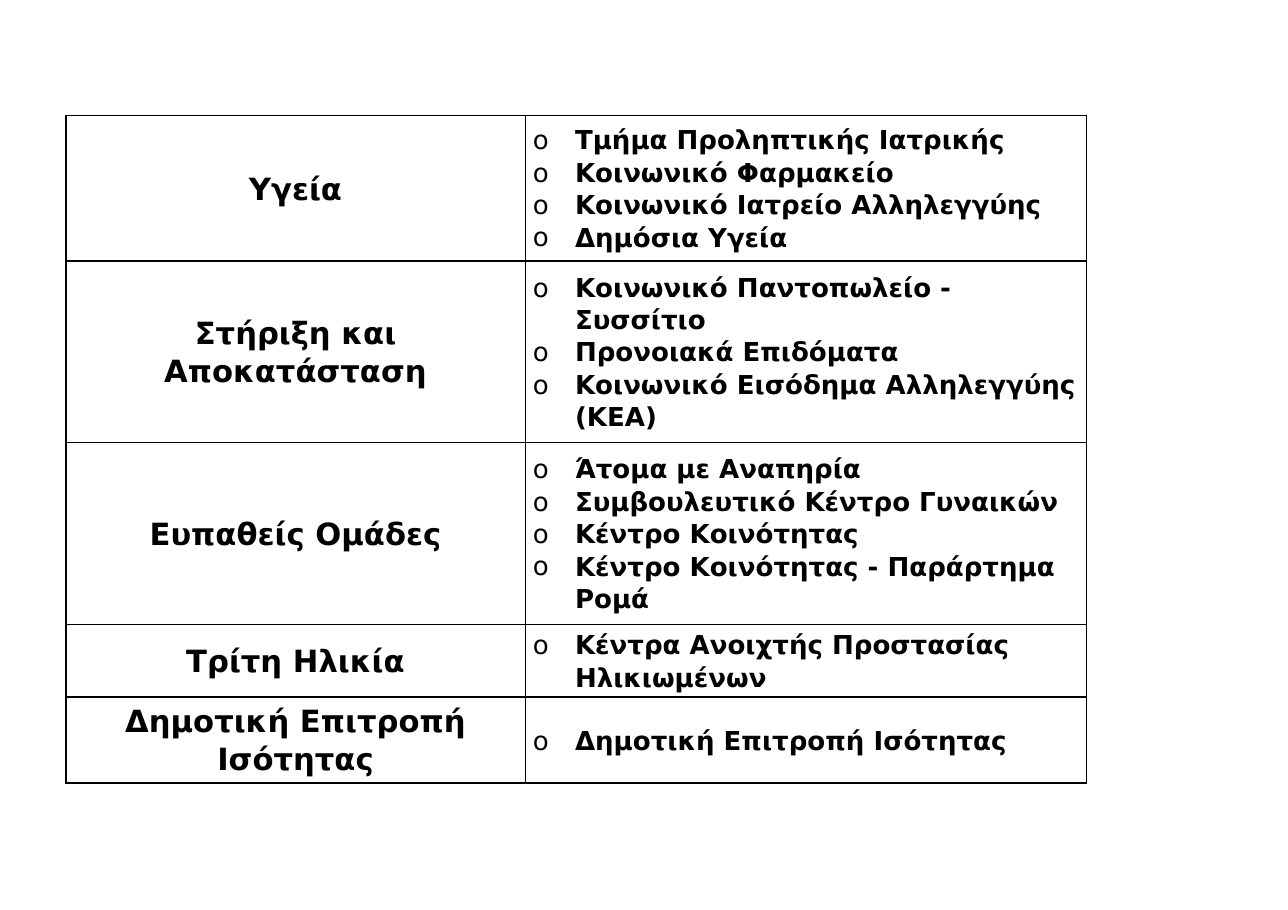
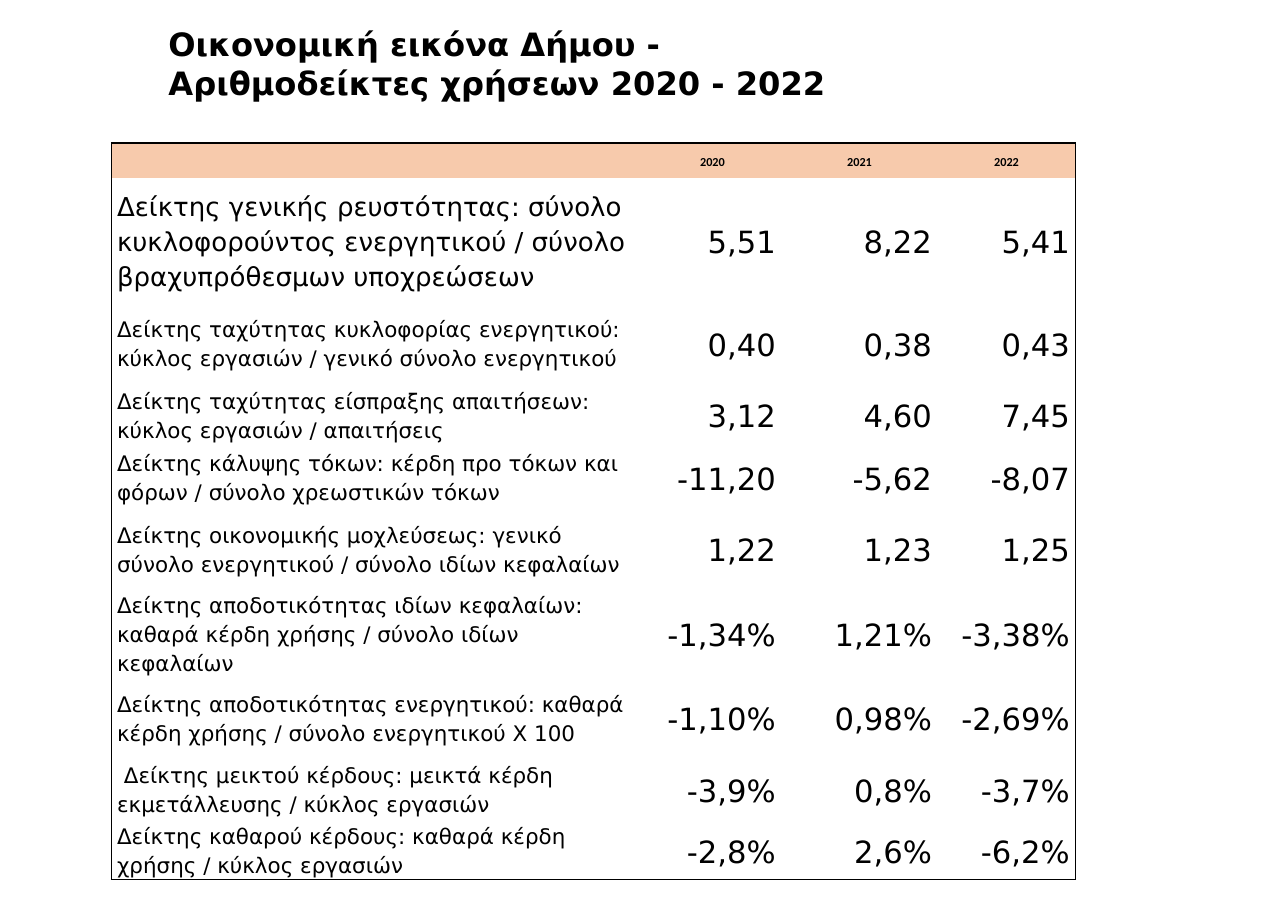
from lxml import etree
from pptx import Presentation
from pptx import util as u
from pptx.dml import color
from pptx.enum import text
from pptx.oxml import ns

INK = "000000"
HEADER_FILL = "F7CAAC"
BODY_FONT = "DejaVu Sans"
ALIGN = text.PP_ALIGN

HEADING = dict(size=u.Pt(20), name=BODY_FONT, bold=True)
ITEM = dict(size=u.Pt(17), name=BODY_FONT, bold=True)
TITLE = dict(size=u.Pt(21), name=BODY_FONT, bold=True)
YEAR = dict(size=u.Pt(8), name="Calibri", bold=True)
LEAD_RATIO = dict(size=u.Pt(17), name=BODY_FONT, bold=False)
RATIO = dict(size=u.Pt(14), name=BODY_FONT, bold=False)
VALUE = dict(size=u.Pt(20), name=BODY_FONT, bold=False)

SERVICES = [
    ("Υγεία", ["Τμήμα Προληπτικής Ιατρικής", "Κοινωνικό Φαρμακείο",
               "Κοινωνικό Ιατρείο Αλληλεγγύης", "Δημόσια Υγεία"]),
    ("Στήριξη και Αποκατάσταση", ["Κοινωνικό Παντοπωλείο - Συσσίτιο", "Προνοιακά Επιδόματα",
                                  "Κοινωνικό Εισόδημα Αλληλεγγύης (ΚΕΑ)"]),
    ("Ευπαθείς Ομάδες", ["Άτομα με Αναπηρία", "Συμβουλευτικό Κέντρο Γυναικών",
                         "Κέντρο Κοινότητας", "Κέντρο Κοινότητας - Παράρτημα Ρομά"]),
    ("Τρίτη Ηλικία", ["Κέντρα Ανοιχτής Προστασίας Ηλικιωμένων"]),
    ("Δημοτική Επιτροπή Ισότητας", ["Δημοτική Επιτροπή Ισότητας"]),
]

RATIOS = [
    ("", "2020", "2021", "2022"),
    ("Δείκτης γενικής ρευστότητας: σύνολο κυκλοφορούντος ενεργητικού / "
     "σύνολο βραχυπρόθεσμων υποχρεώσεων", "5,51", "8,22", "5,41"),
    ("Δείκτης ταχύτητας κυκλοφορίας ενεργητικού: κύκλος εργασιών / "
     "γενικό σύνολο ενεργητικού", "0,40", "0,38", "0,43"),
    ("Δείκτης ταχύτητας είσπραξης απαιτήσεων: κύκλος εργασιών / απαιτήσεις",
     "3,12", "4,60", "7,45"),
    ("Δείκτης κάλυψης τόκων: κέρδη προ τόκων και φόρων / σύνολο χρεωστικών τόκων",
     "-11,20", "-5,62", "-8,07"),
    ("Δείκτης οικονομικής μοχλεύσεως: γενικό σύνολο ενεργητικού / "
     "σύνολο ιδίων κεφαλαίων", "1,22", "1,23", "1,25"),
    ("Δείκτης αποδοτικότητας ιδίων κεφαλαίων: καθαρά κέρδη χρήσης / "
     "σύνολο ιδίων κεφαλαίων", "-1,34%", "1,21%", "-3,38%"),
    ("Δείκτης αποδοτικότητας ενεργητικού: καθαρά κέρδη χρήσης / "
     "σύνολο ενεργητικού Χ 100", "-1,10%", "0,98%", "-2,69%"),
    (" Δείκτης μεικτού κέρδους: μεικτά κέρδη εκμετάλλευσης / κύκλος εργασιών",
     "-3,9%", "0,8%", "-3,7%"),
    ("Δείκτης καθαρού κέρδους: καθαρά κέρδη χρήσης / κύκλος εργασιών",
     "-2,8%", "2,6%", "-6,2%"),
]


def paint(target, hex_code):
    """Give a fill, line or font colour object the hex colour."""
    target.rgb = color.RGBColor.from_string(hex_code)


def set_all(target, values):
    """Set every attribute in a dict of format values."""
    for name, value in values.items():
        setattr(target, name, value)


def style_runs(paragraph, style):
    """Format all runs and line breaks of a paragraph."""
    for run in paragraph.runs:
        set_all(run.font, style)
        paint(run.font.color, INK)
    for line_break in paragraph._p.findall(ns.qn("a:br")):
        etree.SubElement(line_break, ns.qn("a:rPr"), sz=str(int(style["size"].pt * 100)))


def add_bullet(paragraph):
    """Give a paragraph a hanging round bullet."""
    properties = paragraph._p.get_or_add_pPr()
    properties.set("marL", str(u.Cm(0.97)))
    properties.set("indent", str(-u.Cm(0.97)))
    etree.SubElement(properties, ns.qn("a:buFont"), typeface=BODY_FONT)
    etree.SubElement(properties, ns.qn("a:buChar"), char="o")


def set_borders(cell, sides):
    """Draw thin lines on the named sides and clear the others."""
    properties = cell._tc.get_or_add_tcPr()
    for side in "LRTB":
        line = etree.SubElement(properties, ns.qn(f"a:ln{side}"), w=str(u.Pt(1)))
        if side in sides:
            fill = etree.SubElement(line, ns.qn("a:solidFill"))
            etree.SubElement(fill, ns.qn("a:srgbClr"), val=INK)
        else:
            etree.SubElement(line, ns.qn("a:noFill"))


def fill_cell(cell, lines, style, align, spacing, inset, sides, bulleted=False, fill=None):
    """Write and format one table cell."""
    set_all(cell, dict(margin_left=inset, margin_right=inset, margin_top=0, margin_bottom=0,
                       vertical_anchor=text.MSO_ANCHOR.MIDDLE))
    set_borders(cell, sides)
    if fill:
        cell.fill.solid()
        paint(cell.fill.fore_color, fill)
    else:
        cell.fill.background()
    cell.text = "\n".join(lines)
    for paragraph in cell.text_frame.paragraphs:
        if bulleted:
            add_bullet(paragraph)
        set_all(paragraph, dict(alignment=align, line_spacing=spacing))
        style_runs(paragraph, style)
        if not paragraph.runs:
            etree.SubElement(paragraph._p, ns.qn("a:endParaRPr"),
                             sz=str(int(style["size"].pt * 100)))


def add_grid(slide, left, top, widths, heights):
    """Add a plain table from column widths and row heights in centimetres."""
    table = slide.shapes.add_table(len(heights), len(widths), u.Cm(left), u.Cm(top),
                                   u.Cm(sum(widths)), u.Cm(sum(heights))).table
    set_all(table, dict(first_row=False, horz_banding=False))
    for column, width in zip(table.columns, widths):
        column.width = u.Cm(width)
    for row, height in zip(table.rows, heights):
        row.height = u.Cm(height)
    return table


def services_table(slide, left, top):
    """Place the table of departments and their services."""
    table = add_grid(slide, left, top, [10.59, 12.95], [3.35, 4.19, 4.19, 1.68, 1.98])
    shared = dict(spacing=1.07, inset=u.Cm(0.18), sides="LRTB")
    for row, (department, services) in enumerate(SERVICES):
        fill_cell(table.cell(row, 0), [department], HEADING, ALIGN.CENTER, **shared)
        fill_cell(table.cell(row, 1), services, ITEM, ALIGN.LEFT, bulleted=True, **shared)


def ratios_table(slide, left, top):
    """Place the financial ratios inside one outer frame."""
    heights = [0.81, 2.87, 1.85, 1.45, 1.45, 1.85, 1.88, 1.85, 1.45, 1.24]
    table = add_grid(slide, left, top, [12.27, 3.18, 3.6, 3.18], heights)
    last_row, last_column = len(RATIOS) - 1, len(RATIOS[0]) - 1
    for row, entries in enumerate(RATIOS):
        for column, entry in enumerate(entries):
            edges = dict(L=column == 0, R=column == last_column, T=row == 0, B=row == last_row)
            if row == 0:
                style, align = YEAR, ALIGN.CENTER
            elif column == 0:
                style, align = (LEAD_RATIO if row == 1 else RATIO), ALIGN.LEFT
            else:
                style, align = VALUE, ALIGN.RIGHT
            fill_cell(table.cell(row, column), [entry], style, align, 1.15, u.Cm(0.13),
                      [side for side, drawn in edges.items() if drawn],
                      fill=HEADER_FILL if row == 0 else None)


def place_title(slide, wording, left, top, width, height):
    """Move, fill and format the title placeholder."""
    title = slide.shapes.title
    set_all(title, dict(left=u.Cm(left), top=u.Cm(top), width=u.Cm(width), height=u.Cm(height)))
    frame = title.text_frame
    frame.text = wording
    set_all(frame, dict(word_wrap=True, vertical_anchor=text.MSO_ANCHOR.MIDDLE,
                        auto_size=text.MSO_AUTO_SIZE.SHAPE_TO_FIT_TEXT))
    frame.paragraphs[0].alignment = ALIGN.LEFT
    style_runs(frame.paragraphs[0], TITLE)


def main():
    """Build and save both slides."""
    deck = Presentation()
    set_all(deck, dict(slide_width=u.Cm(29.7), slide_height=u.Cm(20.99)))
    title_only, blank = deck.slide_layouts[5], deck.slide_layouts[6]
    services_table(deck.slides.add_slide(blank), 1.52, 2.67)
    finances = deck.slides.add_slide(title_only)
    place_title(finances, "Οικονομική εικόνα Δήμου -\vΑριθμοδείκτες χρήσεων 2020 - 2022",
                3.63, 0.43, 21.39, 2.06)
    ratios_table(finances, 2.57, 3.3)
    deck.save("out.pptx")


if __name__ == "__main__":
    main()
